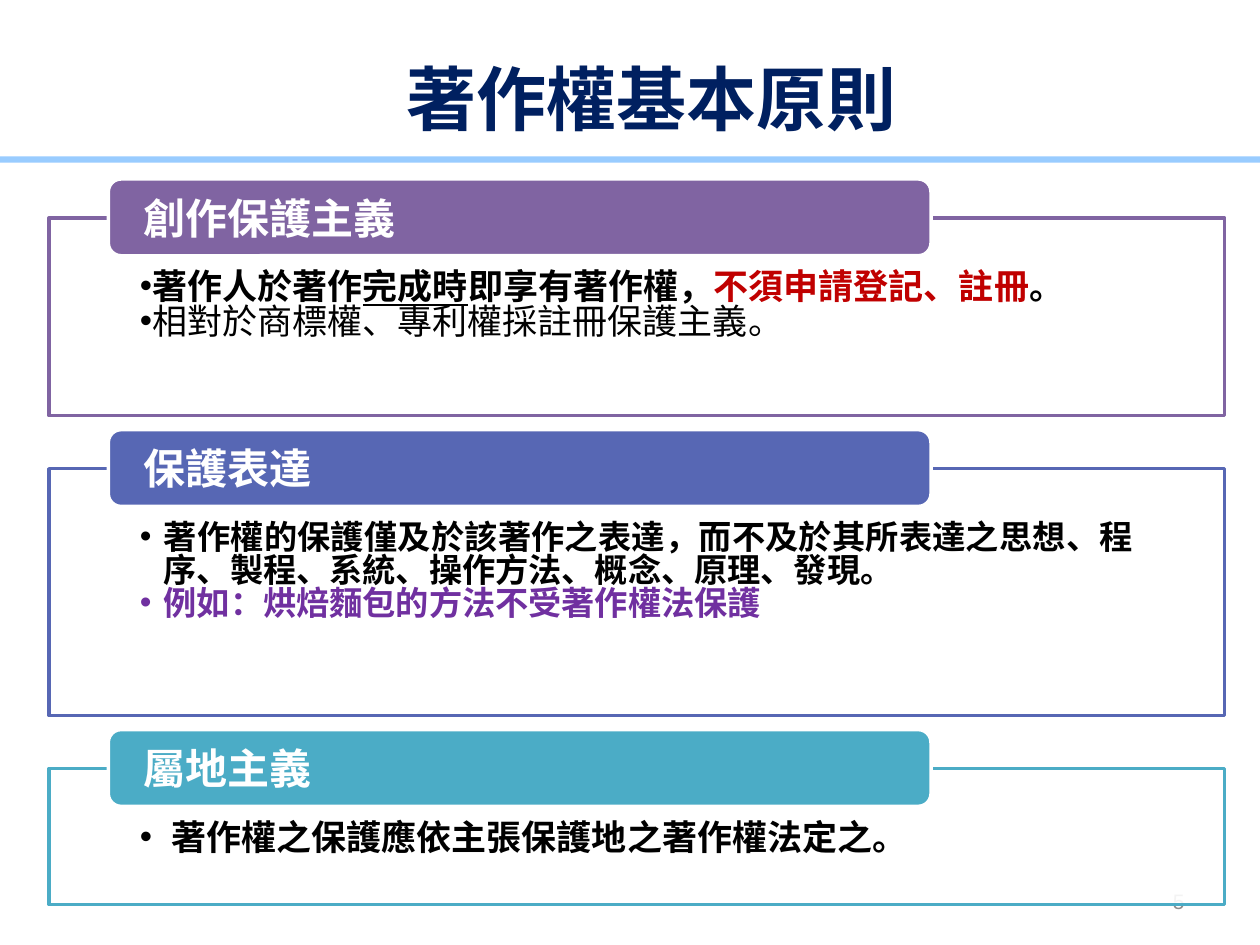
"""Build a slide with the three basic principles of copyright."""
from dataclasses import dataclass

from lxml import etree
from pptx import Presentation
from pptx.dml.color import RGBColor
from pptx.enum.shapes import MSO_SHAPE as Shape
from pptx.enum.text import MSO_ANCHOR as Anchor, PP_ALIGN as Align
from pptx.oxml.ns import qn
from pptx.util import Inches, Pt


@dataclass(frozen=True)
class Theme:
    font: str = "Noto Sans CJK SC"
    number_font: str = "Arial"
    navy: str = "002060"
    sky: str = "99CCFF"
    white: str = "FFFFFF"
    black: str = "000000"
    gray: str = "8C8C8C"
    red: str = "C00000"
    violet: str = "7030A0"
    purple: str = "8064A2"
    blue: str = "5767B4"
    teal: str = "4BACC6"
    title_size: float = 40
    heading_size: float = 24
    body_size: float = 20
    small_body_size: float = 19
    number_size: float = 12


theme = Theme()


def add_run(paragraph, text, size, color, bold=True, underline=None, font=theme.font):
    run = paragraph.add_run()
    run.text = text
    run.font.size = Pt(size)
    run.font.bold = bold
    run.font.underline = underline
    run.font.color.rgb = RGBColor.from_string(color)
    run.font.name = font
    etree.SubElement(run.font._element, qn("a:ea"), typeface=font)


def add_box(shapes, kind, bounds, fill, line=None):
    shape = shapes.add_shape(kind, *map(Inches, bounds))
    shape.shadow.inherit = False
    shape.fill.solid()
    shape.fill.fore_color.rgb = RGBColor.from_string(fill)
    if line:
        shape.line.color.rgb = RGBColor.from_string(line)
        shape.line.width = Pt(2)
    else:
        shape.line.fill.background()
    shape.text_frame.word_wrap = True
    return shape


principles = [
    ("創作保護主義", theme.purple, 1.73, 1.57, theme.body_size, Align.LEFT, [
        (0.1, [("著作人於著作", theme.black, True, None),
               ("完成時", theme.black, True, True),
               ("即享有著作權，", theme.black, True, None),
               ("不須申請登記、註冊", theme.red, True, None),
               ("。", theme.black, True, None)]),
        (0.09, [("相對於商標權、專利權採註冊保護主義。", theme.black, False, None)]),
    ]),
    ("保護表達", theme.blue, 3.72, 1.96, theme.small_body_size, Align.JUSTIFY, [
        (0.19, [("著作權的保護僅及於該著作之表達，而不及於其所表達之思想、程序、製程、系統、操作方法、概念、原理、發現。",
                 theme.black, True, None)]),
        (0.19, [("例如：烘焙麵包的方法不受著作權法保護", theme.violet, True, None)]),
    ]),
    ("屬地主義", theme.teal, 6.1, 1.08, theme.body_size, Align.LEFT, [
        (0.25, [("著作權之保護應依主張保護地之著作權法定之。", theme.black, True, None)]),
    ]),
]

presentation = Presentation()
presentation.slide_width = Inches(10)
presentation.slide_height = Inches(7.5)
slide = presentation.slides.add_slide(presentation.slide_layouts[5])

add_box(slide.shapes, Shape.RECTANGLE, (-0.04, 1.24, 10.06, 0.05), theme.sky)

title = slide.shapes.title
title.left, title.top, title.width, title.height = map(Inches, (0.67, 0.29, 9, 0.96))
title.text_frame.vertical_anchor = Anchor.MIDDLE
paragraph = title.text_frame.paragraphs[0]
paragraph.alignment = Align.CENTER
add_run(paragraph, "著作權基本原則", theme.title_size, theme.navy)

number = slide.shapes.add_textbox(*map(Inches, (7.17, 6.95, 2.33, 0.4)))
number.text_frame.word_wrap = True
number.text_frame.vertical_anchor = Anchor.MIDDLE
paragraph = number.text_frame.paragraphs[0]
paragraph.alignment = Align.RIGHT
add_run(paragraph, "5", theme.number_size, theme.gray, bold=False, font=theme.number_font)

for heading, color, top, height, size, alignment, items in principles:
    panel = add_box(slide.shapes, Shape.RECTANGLE, (0.39, top, 9.33, height), theme.white, color)
    panel_color = panel._element.spPr.find(qn("a:solidFill")).find(qn("a:srgbClr"))
    etree.SubElement(panel_color, qn("a:alpha"), val="90000")
    frame = panel.text_frame
    frame.vertical_anchor = Anchor.TOP
    frame.margin_left = frame.margin_right = Inches(0.72)
    frame.margin_top, frame.margin_bottom = Inches(0.43), Inches(0.16)
    for index, (indent, runs) in enumerate(items):
        paragraph = frame.add_paragraph() if index else frame.paragraphs[0]
        paragraph.alignment = alignment
        paragraph.level = 1
        paragraph.line_spacing = 0.83
        properties = paragraph._p.get_or_add_pPr()
        properties.set("marL", str(Inches(indent)))
        properties.set("indent", str(-Inches(indent)))
        etree.SubElement(properties, qn("a:buFont"), typeface=theme.number_font)
        etree.SubElement(properties, qn("a:buChar"), char="•")
        for text, text_color, bold, underline in runs:
            add_run(paragraph, text, size, text_color, bold, underline)

    badge = add_box(slide.shapes, Shape.ROUNDED_RECTANGLE, (0.86, top - 0.31, 6.53, 0.61), color, theme.white)
    frame = badge.text_frame
    frame.vertical_anchor = Anchor.MIDDLE
    frame.margin_left = frame.margin_right = Inches(0.25)
    frame.margin_top = frame.margin_bottom = 0
    paragraph = frame.paragraphs[0]
    paragraph.alignment = Align.LEFT
    add_run(paragraph, heading, theme.heading_size, theme.white)

presentation.save("out.pptx")
